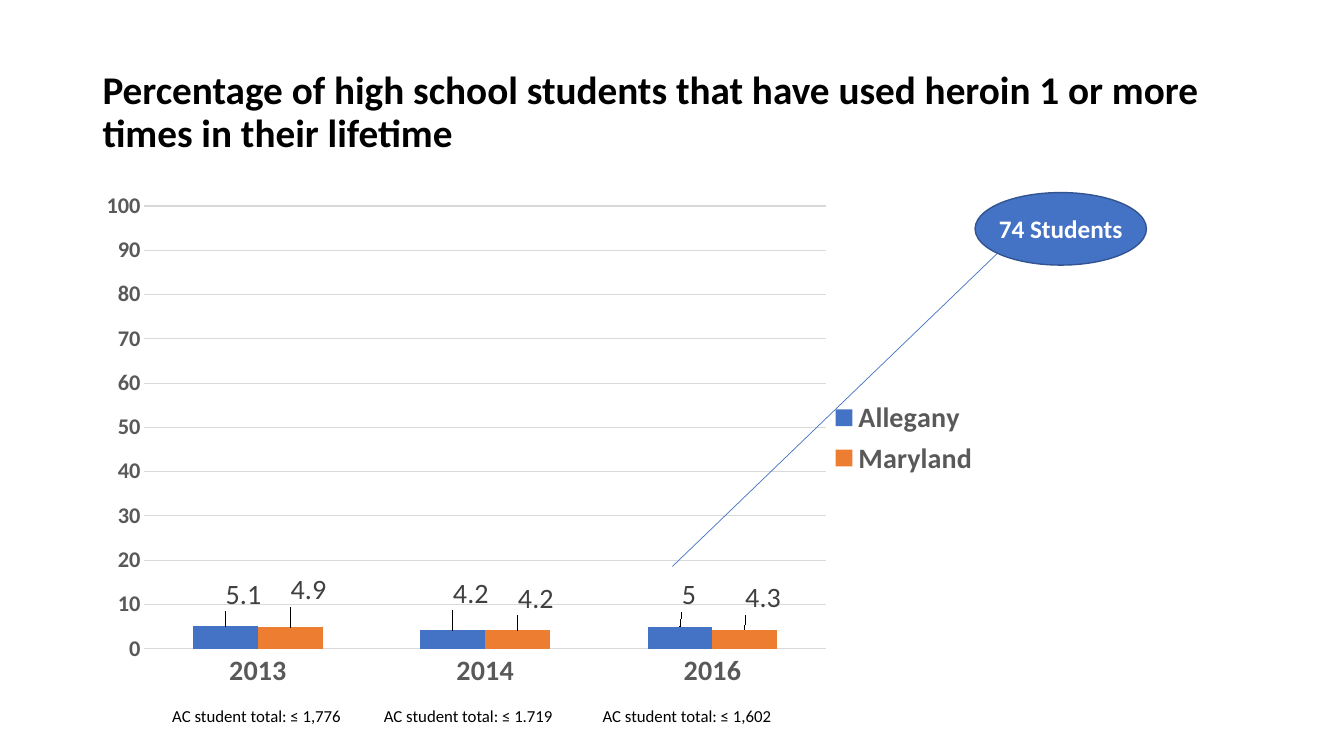
from dataclasses import dataclass
from lxml.etree import SubElement
from pptx import Presentation
from pptx.chart.data import CategoryChartData
from pptx.dml.color import RGBColor
from pptx.enum.chart import XL_CHART_TYPE, XL_LABEL_POSITION, XL_LEGEND_POSITION, XL_TICK_MARK
from pptx.enum.shapes import MSO_CONNECTOR, MSO_SHAPE
from pptx.enum.text import MSO_ANCHOR, PP_ALIGN
from pptx.oxml import parse_xml
from pptx.oxml.ns import nsdecls, qn
from pptx.util import Inches, Pt

BLACK = RGBColor(0x00, 0x00, 0x00)
WHITE = RGBColor(0xFF, 0xFF, 0xFF)
BLUE = RGBColor(0x44, 0x72, 0xC4)
NAVY = RGBColor(0x32, 0x54, 0x91)
ORANGE = RGBColor(0xED, 0x7D, 0x31)
GREY = RGBColor(0x59, 0x59, 0x59)
DARK = RGBColor(0x40, 0x40, 0x40)
PALE = RGBColor(0xD9, 0xD9, 0xD9)
FACE = "Calibri"
WIDE, HIGH = Inches(13.33), Inches(7.5)


@dataclass(frozen=True)
class Box:
    left: float
    top: float
    width: float
    height: float

    def place(self) -> tuple[int, int, int, int]:
        return across(self.left), down(self.top), across(self.width), down(self.height)


@dataclass(frozen=True)
class Group:
    name: str
    color: RGBColor
    vals: tuple[float, ...]
    shifts: tuple[tuple[float, float], ...]


@dataclass(frozen=True)
class Note:
    text: str
    box: Box
    size: int = 12
    color: RGBColor = BLACK
    bold: bool = False
    align: PP_ALIGN = PP_ALIGN.LEFT


YEARS = ("2013", "2014", "2016")
GROUPS = (
    Group("Allegany", BLUE, (5.1, 4.2, 5), ((0.02, -0.02), (0.02, -0.03), (0.01, -0.02))),
    Group("Maryland", ORANGE, (4.9, 4.2, 4.3), ((0.02, -0.03), (0.02, -0.02), (0.02, -0.02))),
)
TOTALS = ((12.08, "1,776"), (27.83, "1.719"), (44.1, "1,602"))
NOTES = (
    Note("74 Students", Box(72.55, 27.6, 12.75, 5.33), 18, WHITE, True, PP_ALIGN.CENTER),
    *(Note(f"AC student total: ≤ {total}", Box(left, 92.67, 14.4, 4)) for left, total in TOTALS),
)


def across(share: float) -> int:
    return round(WIDE * share / 100)


def down(share: float) -> int:
    return round(HIGH * share / 100)


def style(font, size: int, color: RGBColor, bold: bool = False) -> None:
    font.name = FACE
    font.size = Pt(size)
    font.bold = bold
    font.color.rgb = color


def layout(**parts: str | float):
    root = parse_xml(f"<c:layout {nsdecls('c')}><c:manualLayout/></c:layout>")
    for tag, val in parts.items():
        SubElement(root[0], qn(f"c:{tag}")).set("val", str(val))
    return root


def add_title(slide, text: str, box: Box) -> None:
    title = slide.shapes.title
    title.left, title.top, title.width, title.height = box.place()
    frame = title.text_frame
    frame.text = text
    frame.word_wrap = True
    frame.vertical_anchor = MSO_ANCHOR.MIDDLE
    para = frame.paragraphs[0]
    para.alignment = PP_ALIGN.LEFT
    para.line_spacing = 0.9
    style(para.font, 28, BLACK, True)


def add_bars(slide, box: Box) -> None:
    data = CategoryChartData()
    data.categories = YEARS
    for group in GROUPS:
        data.add_series(group.name, group.vals)
    chart = slide.shapes.add_chart(XL_CHART_TYPE.COLUMN_CLUSTERED, *box.place(), data).chart
    style(chart.font, 10, BLACK)
    chart.has_title = False
    chart.has_legend = True
    chart.legend.position = XL_LEGEND_POSITION.RIGHT
    chart.legend.include_in_layout = False
    style(chart.legend.font, 20, GREY, True)
    for axis, size in ((chart.category_axis, 20), (chart.value_axis, 16)):
        axis.major_tick_mark = axis.minor_tick_mark = XL_TICK_MARK.NONE
        axis.format.line.fill.background()
        style(axis.tick_labels.font, size, GREY, True)
    scale = chart.value_axis
    scale.minimum_scale, scale.maximum_scale, scale.major_unit = 0, 100, 10
    grid = scale.major_gridlines.format.line
    grid.color.rgb = PALE
    grid.width = Pt(0.75)
    plot = chart.plots[0]
    plot.gap_width, plot.overlap = 150, 0
    plot.vary_by_categories = False
    for group, bars in zip(GROUPS, plot.series):
        bars.format.fill.solid()
        bars.format.fill.fore_color.rgb = group.color
        for spot, (right, drop) in enumerate(group.shifts):
            label = bars.points[spot].data_label
            style(label.font, 20, DARK)
            label.position = XL_LABEL_POSITION.OUTSIDE_END
            node = bars.data_labels._element.findall(qn("c:dLbl"))[spot]
            node.insert(1, layout(x=right, y=drop))
        style(bars.data_labels.font, 20, DARK)
        bars.data_labels.show_value = True
    area = chart._chartSpace.find(f".//{qn('c:plotArea')}")
    for old in area.findall(qn("c:layout")):
        area.remove(old)
    area.insert(0, layout(layoutTarget="inner", xMode="edge", yMode="edge",
                          x=0.07, y=0.06, w=0.75, h=0.84))


def add_line(slide, start: tuple[float, float], end: tuple[float, float]) -> None:
    line = slide.shapes.add_connector(
        MSO_CONNECTOR.STRAIGHT, across(start[0]), down(start[1]), across(end[0]), down(end[1]))
    line.line.color.rgb = BLUE
    line.line.width = Pt(0.5)
    SubElement(line._element.spPr, qn("a:effectLst"))


def add_oval(slide, box: Box) -> None:
    oval = slide.shapes.add_shape(MSO_SHAPE.OVAL, *box.place())
    oval.shadow.inherit = False
    oval.fill.solid()
    oval.fill.fore_color.rgb = BLUE
    oval.line.color.rgb = NAVY
    oval.line.width = Pt(1)


def add_note(slide, note: Note) -> None:
    frame = slide.shapes.add_textbox(*note.box.place()).text_frame
    frame.word_wrap = True
    para = frame.paragraphs[0]
    para.text = note.text
    para.alignment = note.align
    style(para.font, note.size, note.color, note.bold)


def main() -> None:
    deck = Presentation()
    deck.slide_width, deck.slide_height = WIDE, HIGH
    slide = deck.slides.add_slide(deck.slide_layouts.get_by_name("Title Only"))
    add_title(slide, "Percentage of high school students that have used heroin "
              "1 or more times in their lifetime", Box(6.88, 5.33, 86.25, 19.33))
    add_bars(slide, Box(6, 23.07, 67.65, 69.73))
    add_line(slide, (50.03, 74.93), (74.55, 32.93))
    add_oval(slide, Box(72.55, 25.47, 12.75, 9.6))
    for note in NOTES:
        add_note(slide, note)
    deck.save("out.pptx")


if __name__ == "__main__":
    main()
